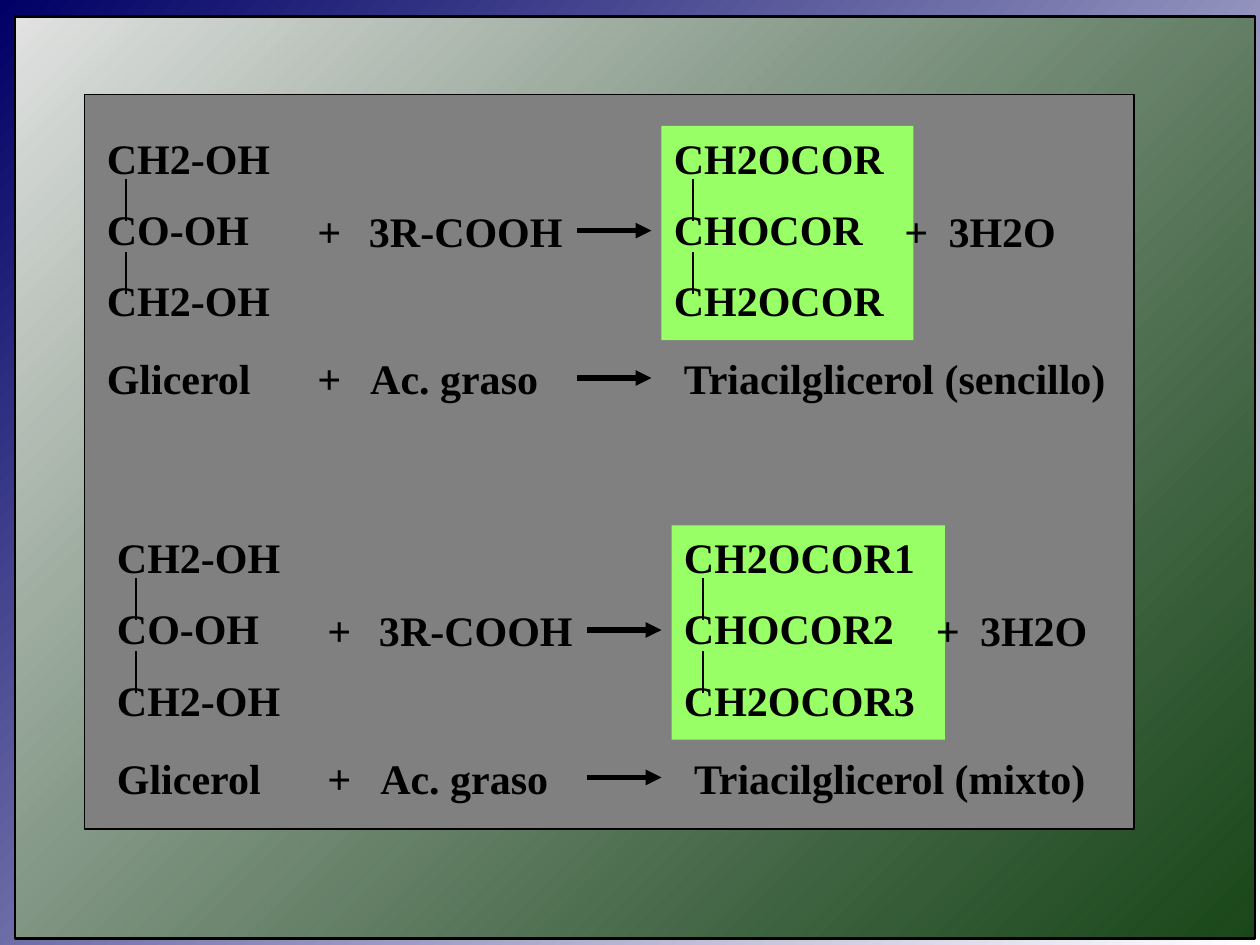
from pptx import Presentation
from pptx.dml.color import RGBColor
from pptx.enum.shapes import MSO_CONNECTOR, MSO_SHAPE
from pptx.enum.text import MSO_ANCHOR, MSO_AUTO_SIZE, PP_ALIGN
from pptx.oxml.ns import qn
from pptx.util import Inches, Pt
from lxml import etree

RECTANGLE = MSO_SHAPE.RECTANGLE
STRAIGHT = MSO_CONNECTOR.STRAIGHT
TOP = MSO_ANCHOR.TOP
LEFT = PP_ALIGN.LEFT
GROW = MSO_AUTO_SIZE.SHAPE_TO_FIT_TEXT

FONT = "Times New Roman"
COLORS = {
    "ink": "000000",
    "page_start": "000066",
    "page_end": "FFFFFF",
    "frame_start": "E2E3E2",
    "frame_end": "003300",
    "panel": "808080",
    "product": "99FF66",
}
ROW_HEIGHT = 0.5
MOLECULE_HEIGHT = 1.7
GLYCEROL = ["CH2-OH", "CO-OH", "CH2-OH"]


def color(name):
    """Return the named colour."""
    return RGBColor.from_string(COLORS[name])


def add_gradient(fill, start, end):
    """Fill with a two-colour gradient running to the lower right."""
    fill.gradient()
    fill.gradient_angle = 315
    for stop, name, position in zip(fill.gradient_stops, (start, end), (0, 1)):
        stop.color.rgb = color(name)
        stop.position = position


def add_rectangle(page, box, fill=None, line_width=None):
    """Add a flat rectangle with an optional fill and outline."""
    shape = page.shapes.add_shape(RECTANGLE, *map(Inches, box))
    shape.shadow.inherit = False
    if fill:
        shape.fill.solid()
        shape.fill.fore_color.rgb = color(fill)
    if line_width:
        shape.line.color.rgb = color("ink")
        shape.line.width = Pt(line_width)
    else:
        shape.line.fill.background()
    return shape


def write_lines(shape, lines, tab=None):
    """Write bold paragraphs, each preceded by half a line of space."""
    frame = shape.text_frame
    frame.text = "\n".join(lines)
    frame.word_wrap = True
    frame.auto_size = GROW
    frame.vertical_anchor = TOP
    for para in frame.paragraphs:
        para.alignment = LEFT
        properties = para._p.get_or_add_pPr()
        spacing = etree.SubElement(properties, qn("a:spcBef"))
        etree.SubElement(spacing, qn("a:spcPct"), val="50000")
        if tab:
            tabs = etree.SubElement(properties, qn("a:tabLst"))
            etree.SubElement(tabs, qn("a:tab"), pos=str(Inches(tab)), algn="l")
        for span in para.runs:
            span.font.name = FONT
            span.font.size = Pt(24)
            span.font.bold = True
            span.font.color.rgb = color("ink")


def add_label(page, box, lines, tab=None):
    """Add a text box holding the given lines."""
    write_lines(page.shapes.add_textbox(*map(Inches, box)), lines, tab)


def add_line(page, start, end, width, arrow=False):
    """Add a straight line, optionally ending in an arrowhead."""
    line = page.shapes.add_connector(STRAIGHT, *map(Inches, start + end))
    line.line.color.rgb = color("ink")
    line.line.width = Pt(width)
    properties = line._element.spPr
    if arrow:
        etree.SubElement(properties.find(qn("a:ln")), qn("a:tailEnd"), type="triangle")
    etree.SubElement(properties, qn("a:effectLst"))


def add_molecule(page, box, lines, fill=None):
    """Add three stacked groups joined by two vertical bonds."""
    left, top = box[:2]
    if fill:
        write_lines(add_rectangle(page, box, fill), lines)
    else:
        add_label(page, box, lines)
    for offset in (0.42, 1.0):
        bond_top = top + offset
        add_line(page, (left + 0.25, bond_top), (left + 0.25, bond_top + 0.33), 0.75)


def add_reaction(page, box, product, product_width, product_name):
    """Add a reaction with its formulas above and its names below."""
    left, top = box
    formula_top, name_top = top + 0.58, top + 1.75
    product_left = left + 4.5
    water_left = product_left + product_width - 0.17

    add_molecule(page, (left, top, 1.5, MOLECULE_HEIGHT), GLYCEROL)
    add_molecule(page, (product_left, top, product_width, MOLECULE_HEIGHT),
                 product, "product")
    add_label(page, (left + 1.67, formula_top, 0.42, ROW_HEIGHT), ["+"])
    add_label(page, (left + 2.08, formula_top, 2, ROW_HEIGHT), ["3R-COOH"])
    add_label(page, (water_left, formula_top, 1.42, ROW_HEIGHT), ["+\t3H2O"], 0.35)

    add_label(page, (left, name_top, 1.5, ROW_HEIGHT), ["Glicerol"])
    add_label(page, (left + 1.67, name_top, 2, ROW_HEIGHT), ["+\tAc. graso"], 0.42)
    add_label(page, (left + 4.58, name_top, 3.58, ROW_HEIGHT), [product_name])

    for row_top in (formula_top, name_top):
        middle = row_top + ROW_HEIGHT / 2
        add_line(page, (left + 3.83, middle), (left + 4.42, middle), 3, arrow=True)


def add_backdrop(page, frame_box, panel_box):
    """Add the gradient background, the green frame and the grey panel."""
    add_gradient(page.background.fill, "page_start", "page_end")
    frame = add_rectangle(page, frame_box, line_width=1.5)
    add_gradient(frame.fill, "frame_start", "frame_end")
    last_color = list(frame._element.spPr.find(qn("a:gradFill")).iter(qn("a:srgbClr")))[-1]
    etree.SubElement(last_color, qn("a:alpha"), val="90000")
    add_rectangle(page, panel_box, "panel", 0.75)


def main():
    """Build the slide of the two esterification reactions."""
    deck = Presentation()
    deck.slide_width, deck.slide_height = Inches(10), Inches(7.5)
    page = deck.slides.add_slide(deck.slide_layouts[6])
    add_backdrop(page, (0.12, 0.13, 9.84, 7.32), (0.67, 0.75, 8.33, 5.83))
    add_reaction(page, (0.75, 1.0), ["CH2OCOR", "CHOCOR", "CH2OCOR"], 2,
                 "Triacilglicerol (sencillo)")
    add_reaction(page, (0.83, 4.17), ["CH2OCOR1", "CHOCOR2", "CH2OCOR3"], 2.17,
                 "Triacilglicerol (mixto)")
    deck.save("out.pptx")


if __name__ == "__main__":
    main()
